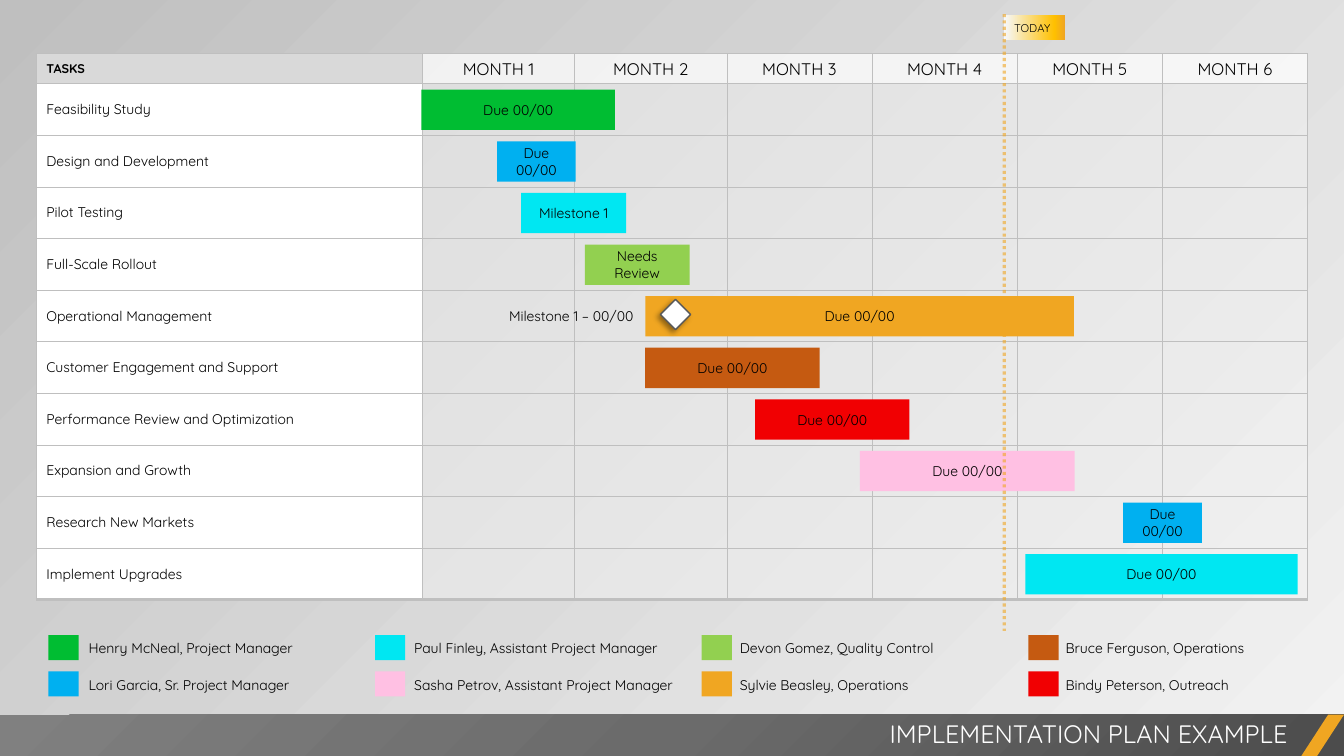
from dataclasses import dataclass

from lxml import etree
from pptx import Presentation
from pptx.dml.color import RGBColor
from pptx.enum.dml import MSO_LINE
from pptx.enum.shapes import MSO_CONNECTOR, MSO_SHAPE
from pptx.enum.text import MSO_ANCHOR, MSO_AUTO_SIZE, PP_ALIGN
from pptx.oxml import parse_xml
from pptx.oxml.ns import nsdecls, qn
from pptx.util import Inches, Pt

RECT, SLANT, GEM = MSO_SHAPE.RECTANGLE, MSO_SHAPE.PARALLELOGRAM, MSO_SHAPE.DIAMOND
LEFT, MID, RIGHT = PP_ALIGN.LEFT, PP_ALIGN.CENTER, PP_ALIGN.RIGHT
TOP, CENTER = MSO_ANCHOR.TOP, MSO_ANCHOR.MIDDLE
GROW, DOTS, LINE = MSO_AUTO_SIZE.SHAPE_TO_FIT_TEXT, MSO_LINE.ROUND_DOT, MSO_CONNECTOR.STRAIGHT

FONT = "Quicksand"
BLACK = RGBColor(0x00, 0x00, 0x00)
WHITE = RGBColor(0xFF, 0xFF, 0xFF)
PALE = RGBColor(0xF2, 0xF2, 0xF2)
SILVER = RGBColor(0xD9, 0xD9, 0xD9)
GRAY = RGBColor(0xBF, 0xBF, 0xBF)
SLATE = RGBColor(0x59, 0x59, 0x59)
GREEN = RGBColor(0x00, 0xBD, 0x32)
BLUE = RGBColor(0x00, 0xB0, 0xF0)
CYAN = RGBColor(0x00, 0xE7, 0xF2)
LIME = RGBColor(0x92, 0xD0, 0x50)
AMBER = RGBColor(0xF0, 0xA6, 0x22)
GOLD = RGBColor(0xFF, 0xC0, 0x00)
RUST = RGBColor(0xC5, 0x5A, 0x11)
RED = RGBColor(0xF1, 0x00, 0x02)
PINK = RGBColor(0xFF, 0xC0, 0xE3)
ICE = RGBColor(0xF6, 0xF8, 0xFC)
COAL = RGBColor(0x4C, 0x4C, 0x4C)
STEEL = RGBColor(0x6B, 0x6B, 0x6B)
ASH = RGBColor(0x80, 0x80, 0x80)

COLS = [3.83, 1.51, 1.51, 1.44, 1.44, 1.44, 1.44]
HEAD, ROW = 0.3, 0.512


@dataclass
class Task:
    name: str
    left: float
    width: float
    color: RGBColor
    label: str = "Due 00/00"


@dataclass
class Key:
    name: str
    color: RGBColor
    width: float = 2.4


TASKS = [
    Task("Feasibility Study", 4.18, 1.92, GREEN),
    Task("Design and Development", 4.93, 0.78, BLUE),
    Task("Pilot Testing", 5.17, 1.04, CYAN, "Milestone 1"),
    Task("Full-Scale Rollout", 5.8, 1.04, LIME, "Needs Review"),
    Task("Operational Management", 6.4, 4.25, AMBER),
    Task("Customer Engagement and Support", 6.4, 1.73, RUST),
    Task("Performance Review and Optimization", 7.49, 1.53, RED),
    Task("Expansion and Growth", 8.53, 2.13, PINK),
    Task("Research New Markets", 11.14, 0.78, BLUE),
    Task("Implement Upgrades", 10.17, 2.7, CYAN),
]
KEYS = [
    Key("Henry McNeal, Project Manager", GREEN),
    Key("Lori Garcia, Sr. Project Manager", BLUE),
    Key("Paul Finley, Assistant Project Manager", CYAN, 2.83),
    Key("Sasha Petrov, Assistant Project Manager", PINK, 2.92),
    Key("Devon Gomez, Quality Control", LIME),
    Key("Sylvie Beasley, Operations", AMBER),
    Key("Bruce Ferguson, Operations", RUST),
    Key("Bindy Peterson, Outreach", RED),
]


def fade(root, share: int) -> None:
    tint = root.find(".//" + qn("a:srgbClr"))
    etree.SubElement(tint, qn("a:alpha"), val=str(share * 1000))


def blend(root, stops: list, way: str) -> None:
    marks = "".join(
        f'<a:gs pos="{pos * 1000}"><a:srgbClr val="{tint}"/></a:gs>' for pos, tint in stops
    )
    old = root.find(".//" + qn("a:solidFill"))
    old.getparent().replace(old, parse_xml(
        f'<a:gradFill {nsdecls("a")} rotWithShape="1"><a:gsLst>{marks}</a:gsLst>{way}</a:gradFill>'))


def write(frame, text: str, size: float = 10, align=LEFT, color=BLACK, bold=False) -> None:
    part = frame.paragraphs[0]
    part.alignment = align
    run = part.add_run()
    run.text = text
    run.font.name, run.font.size, run.font.bold = FONT, Pt(size), bold
    run.font.color.rgb = color


def block(shapes, kind, left: float, top: float, width: float, height: float, color):
    shape = shapes.add_shape(kind, Inches(left), Inches(top), Inches(width), Inches(height))
    shape.shadow.inherit = False
    shape.fill.solid()
    shape.fill.fore_color.rgb = color
    shape.line.fill.background()
    return shape


def note(shapes, text: str, left: float, top: float, width: float, height: float, align=LEFT):
    box = shapes.add_textbox(Inches(left), Inches(top), Inches(width), Inches(height))
    box.text_frame.word_wrap = True
    write(box.text_frame, text, align=align)
    return box


def style(cell, color: RGBColor, share: int, base: float) -> None:
    cell.vertical_anchor = CENTER
    cell.fill.solid()
    cell.fill.fore_color.rgb = color
    props = cell._tc.get_or_add_tcPr()
    if share < 100:
        fade(props, share)
    for spot, (side, size) in enumerate([("L", 0.5), ("R", 0.5), ("T", 0.5), ("B", base)]):
        props.insert(spot, parse_xml(
            f'<a:ln{side} {nsdecls("a")} w="{Pt(size)}"><a:solidFill>'
            f'<a:srgbClr val="{GRAY}"/></a:solidFill></a:ln{side}>'))


def draw_frame(slide) -> None:
    slide.background.fill.solid()
    slide.background.fill.fore_color.rgb = GRAY
    blend(slide.element, [(0, PALE), (100, GRAY)], '<a:lin ang="13500000" scaled="0"/>')
    fade(slide.element, 40)
    band = block(slide.shapes, RECT, 0, 7.09, 13.33, 0.42, COAL)
    blend(band.element, [(0, COAL), (50, STEEL), (100, ASH)],
          '<a:path path="circle"><a:fillToRect l="100000" t="100000"/></a:path>')
    slant = block(slide.shapes, SLANT, 12.9, 7.09, 0.43, 0.42, AMBER)
    slant.adjustments[0] = 0.65
    title = slide.shapes.title
    slant.element.addnext(title.element)
    title.left, title.top = Inches(5.25), Inches(7.08)
    title.width, title.height = Inches(7.62), Inches(0.4)
    title.text_frame.auto_size = GROW
    title.text_frame.vertical_anchor = TOP
    write(title.text_frame, "IMPLEMENTATION PLAN EXAMPLE", 18, RIGHT, WHITE)


def draw_grid(shapes) -> None:
    rows = len(TASKS) + 1
    grid = shapes.add_table(rows, len(COLS), Inches(0.36), Inches(0.53),
                            Inches(sum(COLS)), Inches(HEAD + ROW * len(TASKS))).table
    grid.first_row = grid.horz_banding = False
    for col, width in enumerate(COLS):
        grid.columns[col].width = Inches(width)
    for row in range(rows):
        grid.rows[row].height = Inches(ROW if row else HEAD)
        for col in range(len(COLS)):
            cell = grid.cell(row, col)
            base = 3 if row == rows - 1 else 0.5
            if col:
                style(cell, PALE if row else WHITE, 50 if row else 75, base)
            else:
                style(cell, WHITE if row else SILVER, 100, base)
            if row and not col:
                write(cell.text_frame, TASKS[row - 1].name)
            elif col and not row:
                write(cell.text_frame, f"MONTH {col}", 12, MID)
            elif not row:
                write(cell.text_frame, "TASKS", 9, bold=True)


def draw_bars(shapes) -> None:
    for row, task in enumerate(TASKS):
        bar = block(shapes, RECT, task.left, 0.89 + ROW * row, task.width, 0.4, task.color)
        write(bar.text_frame, task.label, align=MID)


def draw_keys(shapes) -> None:
    for spot, key in enumerate(KEYS):
        col, row = divmod(spot, 2)
        top = 6.3 + 0.36 * row
        block(shapes, RECT, 0.48 + 3.24 * col, top, 0.3, 0.25, key.color)
        box = note(shapes, key.name, 0.78 + 3.23 * col, top, key.width, 0.27)
        box.text_frame.auto_size = GROW


def draw_marks(shapes) -> None:
    group = shapes.add_group_shape().shapes
    flag = block(group, RECT, 9.96, 0.15, 0.6, 0.25, GOLD)
    blend(flag.element, [(0, ICE), (83, GOLD), (100, AMBER)], '<a:lin ang="0" scaled="0"/>')
    write(flag.text_frame, "TODAY", 8)
    today = group.add_connector(LINE, Inches(9.96), Inches(0.14), Inches(9.96), Inches(6.26))
    today.line.color.rgb = AMBER
    today.line.width = Pt(2.25)
    today.line.dash_style = DOTS
    fade(today.element, 60)
    etree.SubElement(today.element.spPr, qn("a:effectLst"))
    gem = block(shapes, GEM, 6.55, 2.97, 0.3, 0.3, WHITE)
    gem.line.color.rgb = SLATE
    gem.line.width = Pt(1)
    glow = gem.element.spPr.find(qn("a:effectLst"))
    glow.append(parse_xml(
        f'<a:outerShdw {nsdecls("a")} blurRad="{Pt(4)}" dist="{Pt(3)}" dir="8100000">'
        f'<a:srgbClr val="{BLACK}"><a:alpha val="40000"/></a:srgbClr></a:outerShdw>'))
    box = note(shapes, "Milestone 1 – 00/00", 4.21, 2.93, 2.17, 0.4, RIGHT)
    box.text_frame.vertical_anchor = CENTER


def main() -> None:
    deck = Presentation()
    deck.slide_width, deck.slide_height = Inches(13.33), Inches(7.5)
    slide = deck.slides.add_slide(deck.slide_layouts[5])
    draw_frame(slide)
    draw_grid(slide.shapes)
    draw_bars(slide.shapes)
    draw_keys(slide.shapes)
    draw_marks(slide.shapes)
    deck.save("out.pptx")


if __name__ == "__main__":
    main()
